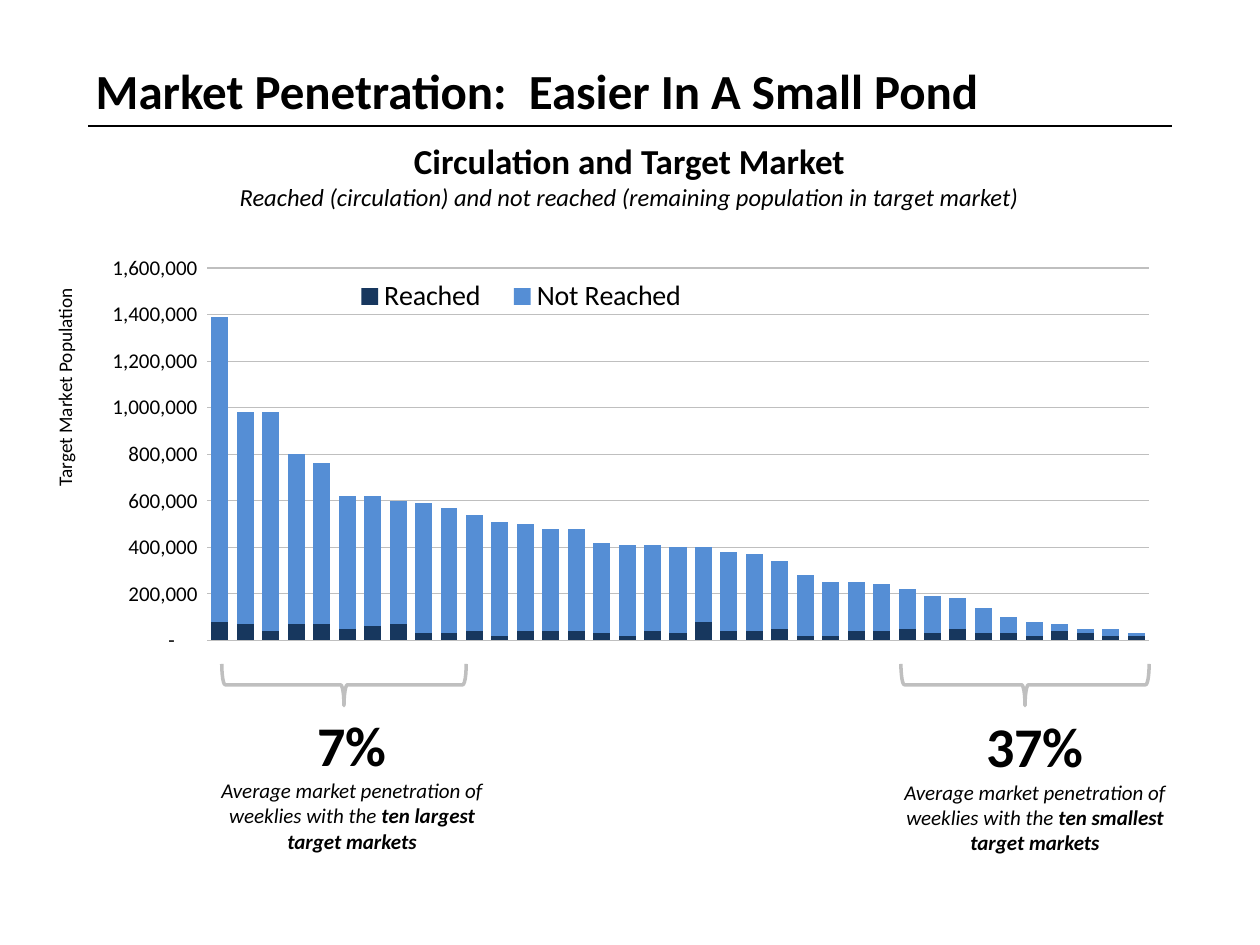
from lxml import etree
from pptx import Presentation
from pptx.chart.data import CategoryChartData
from pptx.dml.color import RGBColor
from pptx.enum.chart import XL_CHART_TYPE, XL_LEGEND_POSITION, XL_TICK_MARK
from pptx.enum.shapes import MSO_CONNECTOR, MSO_SHAPE
from pptx.enum.text import MSO_ANCHOR, MSO_AUTO_SIZE, PP_ALIGN
from pptx.oxml.ns import qn
from pptx.util import Inches, Pt

STACKED = XL_CHART_TYPE.COLUMN_STACKED
LEGEND_TOP = XL_LEGEND_POSITION.TOP
NO_TICK = XL_TICK_MARK.NONE
STRAIGHT = MSO_CONNECTOR.STRAIGHT
BRACE = MSO_SHAPE.RIGHT_BRACE
MIDDLE = MSO_ANCHOR.MIDDLE
GROW = MSO_AUTO_SIZE.SHAPE_TO_FIT_TEXT
NO_FIT = MSO_AUTO_SIZE.NONE
LEFT, CENTER = PP_ALIGN.LEFT, PP_ALIGN.CENTER

FONT = "Calibri"
BLACK, GRAY, NAVY, BLUE = "000000", "BFBFBF", "17375E", "558ED5"
COUNT_FORMAT = '_(* #,##0_);_(* \\(#,##0\\);_(* "-"??_);_('

# Population of each target market, in thousands
REACHED = [80, 70, 40, 70, 70, 50, 60, 70, 30, 30, 40, 20, 40, 40, 40, 30, 20, 40, 30,
           80, 40, 40, 50, 20, 20, 40, 40, 50, 30, 50, 30, 30, 20, 40, 30, 20, 20]
NOT_REACHED = [1310, 910, 940, 730, 690, 570, 560, 530, 560, 540, 500, 490, 460, 440,
               440, 390, 390, 370, 370, 320, 340, 330, 290, 260, 230, 210, 200, 170,
               160, 130, 110, 70, 60, 30, 20, 30, 10]


def color(hex_code):
    return RGBColor.from_string(hex_code)


def set_font(font, size, bold=False, italic=False):
    font.name, font.size = FONT, Pt(size)
    font.bold, font.italic = bold, italic
    font.color.rgb = color(BLACK)


def add_text(paragraph, text, size, align=CENTER, bold=False, italic=False):
    paragraph.alignment = align
    run = paragraph.add_run()
    run.text = text
    set_font(run.font, size, bold, italic)


def add_text_box(slide, box, wrap=True):
    text_box = slide.shapes.add_textbox(*map(Inches, box))
    text_box.text_frame.word_wrap = wrap
    text_box.text_frame.auto_size = GROW
    return text_box


def turned(box):
    """Unrotated box of a shape that fills the given box after a quarter turn."""
    left, top, width, height = box
    shift = (width - height) / 2
    return left + shift, top - shift, height, width


def add_heading(slide, box):
    left, top, width, height = box
    title = slide.shapes.title
    title.left, title.top, title.width, title.height = map(Inches, box)
    frame = title.text_frame
    frame.vertical_anchor, frame.auto_size = MIDDLE, NO_FIT
    add_text(frame.paragraphs[0], "Market Penetration:  Easier In A Small Pond", 28,
             align=LEFT, bold=True)

    # Rule under the title
    rule_y = Inches(top + height)
    rule = slide.shapes.add_connector(STRAIGHT, Inches(0.7), rule_y, Inches(9.3), rule_y)
    rule.line.color.rgb = color(BLACK)
    rule.line.width = Pt(0.75)
    etree.SubElement(rule._element.spPr, qn("a:effectLst"))


def add_chart_heading(slide, box):
    frame = add_text_box(slide, box).text_frame
    add_text(frame.paragraphs[0], "Circulation and Target Market", 20, bold=True)
    add_text(frame.add_paragraph(),
             "Reached (circulation) and not reached (remaining population in target market)",
             14, italic=True)


def set_layout(element, x, y, w, h, inner=False):
    """Place a chart part by fractions of the chart's size."""
    layout = element.find(qn("c:layout"))
    if layout is None:
        layout = etree.Element(qn("c:layout"))
        position = element.find(qn("c:legendPos"))
        if position is None:
            element.insert(0, layout)
        else:
            position.addnext(layout)
    manual = etree.SubElement(layout, qn("c:manualLayout"))
    values = [("layoutTarget", "inner")] if inner else []
    values += [("xMode", "edge"), ("yMode", "edge"), ("x", x), ("y", y), ("w", w), ("h", h)]
    for tag, value in values:
        etree.SubElement(manual, qn("c:" + tag)).set("val", str(value))


def add_market_chart(slide, box):
    data = CategoryChartData()
    data.categories = [str(rank) for rank in range(1, len(REACHED) + 1)]
    for name, thousands in (("Reached", REACHED), ("Not Reached", NOT_REACHED)):
        data.add_series(name, [value * 1000 for value in thousands])
    chart = slide.shapes.add_chart(STACKED, *map(Inches, box), data).chart
    chart.has_title = False
    set_font(chart.font, 18)

    # Columns
    plot = chart.plots[0]
    plot.gap_width, plot.overlap, plot.vary_by_categories = 50, 100, False
    for series, fill in zip(plot.series, (NAVY, BLUE)):
        series.format.fill.solid()
        series.format.fill.fore_color.rgb = color(fill)
    set_layout(chart._chartSpace.chart.plotArea, 0.11, 0.16, 0.87, 0.79, inner=True)

    # Axes
    chart.category_axis.visible = False
    axis = chart.value_axis
    axis.minimum_scale, axis.maximum_scale, axis.major_unit = 0, 1600000, 200000
    axis.major_tick_mark = axis.minor_tick_mark = NO_TICK
    axis.format.line.fill.background()
    axis.major_gridlines.format.line.color.rgb = color(GRAY)
    axis.major_gridlines.format.line.width = Pt(0.75)
    axis.tick_labels.number_format = COUNT_FORMAT
    axis.tick_labels.number_format_is_linked = False
    set_font(axis.tick_labels.font, 12)

    # Legend
    chart.has_legend = True
    legend = chart.legend
    legend.position, legend.include_in_layout = LEGEND_TOP, False
    set_font(legend.font, 16)
    set_layout(legend._element, 0.23, 0.17, 0.34, 0.1)


def add_axis_title(slide, box):
    axis_title = add_text_box(slide, turned(box), wrap=False)
    axis_title.rotation = 270
    add_text(axis_title.text_frame.paragraphs[0], "Target Market Population", 11, align=LEFT)


def add_callout(slide, brace_box, note_box, share, group):
    brace = slide.shapes.add_shape(BRACE, *map(Inches, turned(brace_box)))
    brace.rotation = 90
    brace.shadow.inherit = False
    brace.fill.background()
    brace.line.color.rgb = color(GRAY)
    brace.line.width = Pt(2)

    frame = add_text_box(slide, note_box).text_frame
    add_text(frame.paragraphs[0], share, 32, bold=True)
    note = frame.add_paragraph()
    add_text(note, "Average market penetration of weeklies with the ", 12, italic=True)
    add_text(note, group, 12, bold=True, italic=True)


def main():
    prs = Presentation()
    prs.slide_width, prs.slide_height = Inches(10), Inches(7.5)
    slide = prs.slides.add_slide(prs.slide_layouts[5])
    add_heading(slide, (0.66, 0.42, 8.84, 0.58))
    add_market_chart(slide, (0.7, 1.53, 8.59, 3.74))
    add_callout(slide, (1.76, 5.27, 1.94, 0.33), (1.51, 5.59, 2.57, 1.25),
                "7%", "ten largest target markets")
    add_callout(slide, (7.15, 5.27, 1.97, 0.33), (6.93, 5.6, 2.57, 1.25),
                "37%", "ten smallest target markets")
    add_axis_title(slide, (0.37, 2.15, 0.29, 1.81))
    add_chart_heading(slide, (0.7, 1.06, 8.59, 0.67))
    prs.save("out.pptx")


if __name__ == "__main__":
    main()
